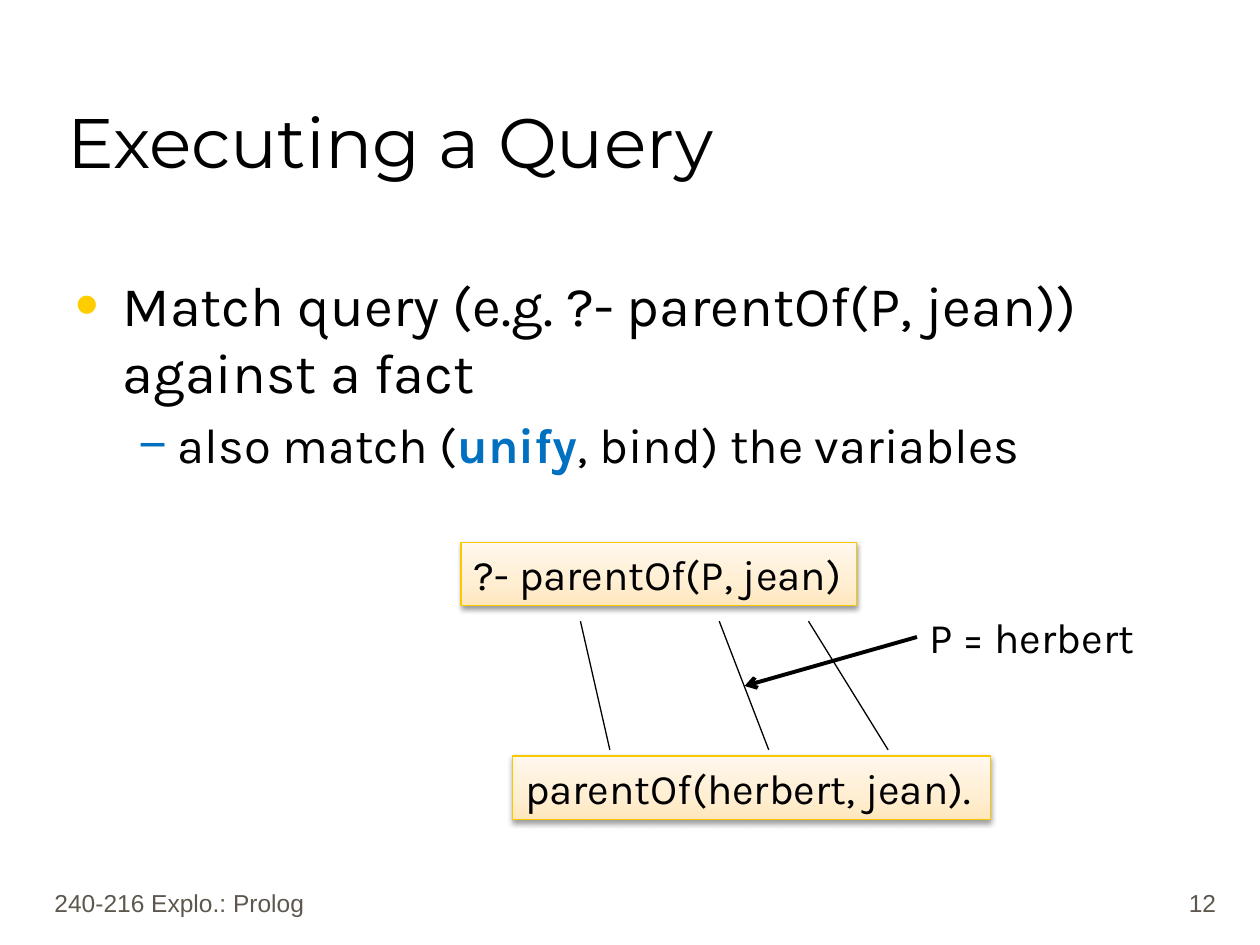
from lxml import etree
from pptx import Presentation
from pptx.dml.color import RGBColor
from pptx.enum.shapes import MSO_CONNECTOR, MSO_SHAPE
from pptx.enum.text import MSO_ANCHOR, MSO_AUTO_SIZE, PP_ALIGN
from pptx.oxml import parse_xml
from pptx.oxml.ns import nsdecls, qn
from pptx.util import Pt

RECT = MSO_SHAPE.RECTANGLE
LINE = MSO_CONNECTOR.STRAIGHT
TOP, BOTTOM = MSO_ANCHOR.TOP, MSO_ANCHOR.BOTTOM
LEFT, RIGHT = PP_ALIGN.LEFT, PP_ALIGN.RIGHT
GROW = MSO_AUTO_SIZE.SHAPE_TO_FIT_TEXT

BLACK = RGBColor(0x00, 0x00, 0x00)
BLUE = RGBColor(0x00, 0x70, 0xC0)
YELLOW = RGBColor(0xFF, 0xCC, 0x00)
GOLD = RGBColor(0xF9, 0xC8, 0x00)
GREY = RGBColor(0x5E, 0x57, 0x4E)
CREAM = [
    (0, RGBColor(0xFF, 0xE7, 0xBD)),
    (35, RGBColor(0xFF, 0xEE, 0xD1)),
    (100, RGBColor(0xFF, 0xF8, 0xEE)),
]


def style(run, size, face, color=BLACK, bold=False):
    font = run.font
    font.size, font.name, font.bold = Pt(size), face, bold
    font.color.rgb = color


def add_text(slide, area, text, size, face, color=BLACK,
             anchor=TOP, align=LEFT, wrap=True):
    box = slide.shapes.add_textbox(*map(Pt, area))
    frame = box.text_frame
    frame.text = text
    frame.word_wrap = wrap
    frame.vertical_anchor = anchor
    if not wrap:
        frame.auto_size = GROW
    para = frame.paragraphs[0]
    para.alignment = align
    for run in para.runs:
        style(run, size, face, color)
    return frame


def add_bullet(para, char, color, left, hang, scale=100):
    props = para._p.get_or_add_pPr()
    props.set("marL", str(Pt(left)))
    props.set("indent", str(-Pt(hang)))
    tint = etree.SubElement(props, qn("a:buClr"))
    etree.SubElement(tint, qn("a:srgbClr"), val=str(color))
    etree.SubElement(props, qn("a:buSzPct"), val=str(scale * 1000))
    etree.SubElement(props, qn("a:buFont"), typeface="Arial")
    etree.SubElement(props, qn("a:buChar"), char=char)


def add_body(slide):
    frame = add_text(slide, (36, 151, 644, 132),
                     "Match query (e.g. ?- parentOf(P, jean)) \vagainst a fact",
                     32, "Karla")
    add_bullet(frame.paragraphs[0], "•", YELLOW, 27, 27, 120)
    para = frame.add_paragraph()
    add_bullet(para, "−", BLUE, 58.5, 22.5)
    para.space_before = Pt(5.6)
    for text, color, bold in [("also match (", BLACK, False),
                              ("unify", BLUE, True),
                              (", bind) the variables", BLACK, False)]:
        run = para.add_run()
        run.text = text
        style(run, 28, "Karla", color, bold)


def add_term(slide, area, text):
    box = slide.shapes.add_shape(RECT, *map(Pt, area))
    box.line.color.rgb = GOLD
    box.line.width = Pt(0.75)
    stops = "".join(
        f'<a:gs pos="{pos * 1000}"><a:srgbClr val="{color}"/></a:gs>'
        for pos, color in CREAM)
    fill = parse_xml(
        f'<a:gradFill {nsdecls("a")} rotWithShape="1"><a:gsLst>{stops}</a:gsLst>'
        '<a:lin ang="16200000" scaled="0"/></a:gradFill>')
    shade = parse_xml(
        f'<a:effectLst {nsdecls("a")}><a:outerShdw blurRad="{Pt(3.1)}" '
        f'dist="{Pt(1.6)}" dir="5400000" rotWithShape="0">'
        f'<a:srgbClr val="{BLACK}"><a:alpha val="38000"/></a:srgbClr>'
        '</a:outerShdw></a:effectLst>')
    props = box._element.spPr
    props.find(qn("a:prstGeom")).addnext(fill)
    props.append(shade)
    frame = box.text_frame
    frame.text = text
    frame.word_wrap = False
    frame.auto_size = GROW
    frame.vertical_anchor = TOP
    para = frame.paragraphs[0]
    para.alignment = LEFT
    style(para.runs[0], 24, "Karla")


def add_line(slide, start, end, width=0.75, arrow=False):
    line = slide.shapes.add_connector(LINE, *map(Pt, start + end))
    line.line.color.rgb = BLACK
    line.line.width = Pt(width)
    props = line._element.spPr
    if arrow:
        etree.SubElement(props.find(qn("a:ln")), qn("a:tailEnd"), type="arrow")
    etree.SubElement(props, qn("a:effectLst"))


def main():
    deck = Presentation()
    deck.slide_width, deck.slide_height = Pt(720), Pt(540)
    slide = deck.slides.add_slide(deck.slide_layouts[6])

    add_text(slide, (31.5, 18, 612, 90), "Executing a Query",
             40, "Montserrat", anchor=BOTTOM)
    add_body(slide)
    add_text(slide, (24, 492, 353, 36), "240-216 Explo.: Prolog",
             14, "Arial", GREY, BOTTOM)
    add_text(slide, (552, 492, 150, 36), "12",
             14, "Arial", GREY, BOTTOM, RIGHT)

    add_term(slide, (263.5, 309.8, 226, 36.3), "?- parentOf(P, jean)")
    add_term(slide, (293, 432, 273, 36.3), "parentOf(herbert, jean).")
    for upper, lower in [(462, 507.5), (411, 439.3), (331.7, 348.5)]:
        add_line(slide, (upper, 355), (lower, 428.5))

    add_text(slide, (524, 346, 139, 36.3), "P = herbert",
             24, "Karla", wrap=False)
    add_line(slide, (524, 364), (425.5, 392), 2.25, True)
    deck.save("out.pptx")


if __name__ == "__main__":
    main()
